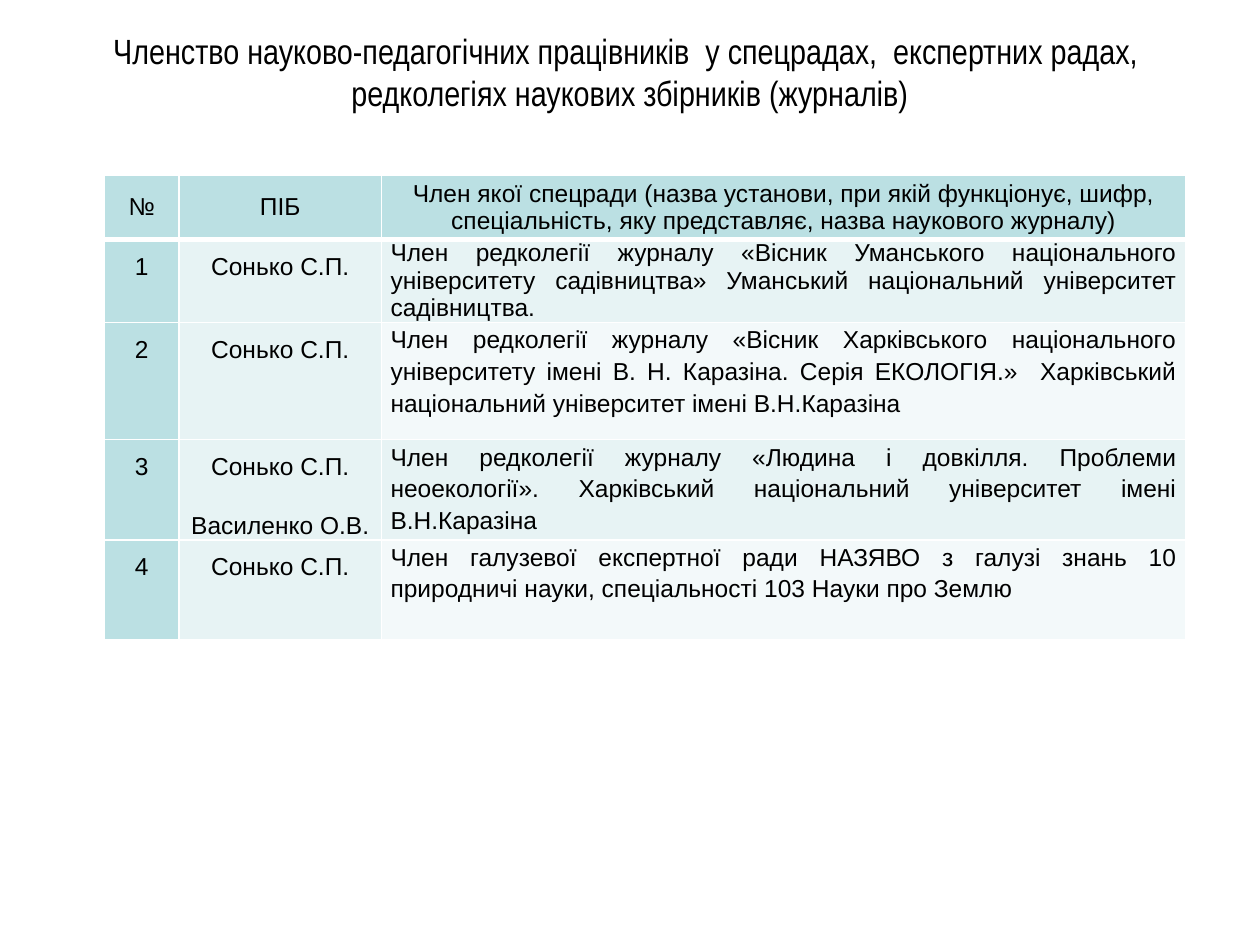
"""Build a slide listing staff membership in academic councils and journals."""
from lxml import etree
from pptx import Presentation
from pptx.dml.color import RGBColor
from pptx.enum.text import MSO_ANCHOR, PP_ALIGN
from pptx.oxml.ns import qn
from pptx.util import Inches, Pt

CENTER, JUSTIFY = PP_ALIGN.CENTER, PP_ALIGN.JUSTIFY
TOP, MIDDLE = MSO_ANCHOR.TOP, MSO_ANCHOR.MIDDLE
BLACK, WHITE, HEADER_FILL = "000000", "FFFFFF", "BBE0E3"
BAND_FILLS = ("E7F3F4", "F3F9FA")
NAME_FILL = BAND_FILLS[0]

TITLE = ("Членство науково-педагогічних працівників  у спецрадах,  експертних радах,  "
         "редколегіях наукових збірників (журналів)")
HEADER = ("№", "ПІБ",
          "Член якої спецради (назва установи, при якій функціонує, шифр, "
          "спеціальність, яку представляє, назва наукового журналу)")
MEMBERS = [
    (["Сонько С.П."],
     "Член редколегії журналу «Вісник Уманського національного університету "
     "садівництва» Уманський національний університет садівництва."),
    (["Сонько С.П."],
     "Член редколегії журналу «Вісник Харківського національного університету "
     "імені В. Н. Каразіна. Серія ЕКОЛОГІЯ.»  Харківський національний "
     "університет імені В.Н.Каразіна"),
    (["Сонько С.П.", "Василенко О.В."],
     "Член редколегії журналу «Людина і довкілля. Проблеми неоекології». "
     "Харківський національний університет імені В.Н.Каразіна"),
    (["Сонько С.П."],
     "Член галузевої експертної ради НАЗЯВО з галузі знань 10 природничі науки, "
     "спеціальності 103 Науки про Землю"),
]
COLUMN_WIDTHS = (0.59, 1.61, 6.38)
ROW_HEIGHTS = (0.51, 0.66, 0.93, 0.79, 0.79)
NAME_FORMAT = {"alignment": CENTER, "line_spacing": 1.5, "space_after": Pt(10)}
DETAIL_FORMAT = {"alignment": JUSTIFY, "line_spacing": 1.15, "space_after": Pt(10)}
COMPACT_FORMAT = {"alignment": JUSTIFY, "line_spacing": 1.0, "space_after": Pt(0)}
HEADER_FORMAT = {**COMPACT_FORMAT, "alignment": CENTER}


def color(value):
    return RGBColor.from_string(value)


def apply(target, values):
    for name, value in values.items():
        setattr(target, name, value)


def write(frame, lines, paragraph_format, font_name, size):
    for index, line in enumerate(lines):
        para = frame.add_paragraph() if index else frame.paragraphs[0]
        apply(para, paragraph_format)
        span = para.add_run()
        span.text = line
        apply(span.font, {"name": font_name, "size": Pt(size), "bold": False})
        span.font.color.rgb = color(BLACK)


def add_borders(cell, widths):
    properties = cell._tc.get_or_add_tcPr()
    for side, width in widths.items():
        line = etree.SubElement(properties, qn(f"a:ln{side}"), w=str(Pt(width)))
        fill = etree.SubElement(line, qn("a:solidFill"))
        etree.SubElement(fill, qn("a:srgbClr"), val=WHITE)


def fill_cell(cell, lines, paragraph_format, fill, anchor, top=1, bottom=1):
    apply(cell, {"margin_left": Inches(0.07), "margin_right": Inches(0.07),
                 "margin_top": 0, "margin_bottom": 0, "vertical_anchor": anchor})
    add_borders(cell, {"L": 1, "R": 1, "T": top, "B": bottom})
    cell.fill.solid()
    cell.fill.fore_color.rgb = color(fill)
    write(cell.text_frame, lines, paragraph_format, "Arial", 14)


def add_title(page):
    title = page.shapes.title
    apply(title, {"left": Inches(0.5), "top": Inches(0.3),
                  "width": Inches(9), "height": Inches(0.54)})
    title.text_frame.vertical_anchor = MIDDLE
    write(title.text_frame, [TITLE], {"alignment": CENTER}, "Arial Narrow", 20)


def add_members(page):
    table = page.shapes.add_table(
        len(ROW_HEIGHTS), len(COLUMN_WIDTHS), Inches(0.83), Inches(1.39),
        Inches(sum(COLUMN_WIDTHS)), Inches(sum(ROW_HEIGHTS))).table
    for column, width in zip(table.columns, COLUMN_WIDTHS):
        column.width = Inches(width)
    for row, height in zip(table.rows, ROW_HEIGHTS):
        row.height = Inches(height)
    for column, text in enumerate(HEADER):
        fill_cell(table.cell(0, column), [text], HEADER_FORMAT, HEADER_FILL, MIDDLE, bottom=3)
    for number, (names, detail) in enumerate(MEMBERS, 1):
        detail_format = COMPACT_FORMAT if number == 1 else DETAIL_FORMAT
        band = BAND_FILLS[(number - 1) % 2]
        cells = [([str(number)], NAME_FORMAT, HEADER_FILL),
                 (names, NAME_FORMAT, NAME_FILL),
                 ([detail], detail_format, band)]
        for column, content in enumerate(cells):
            fill_cell(table.cell(number, column), *content, TOP, top=3 if number == 1 else 1)


def main():
    deck = Presentation()
    apply(deck, {"slide_width": Inches(10), "slide_height": Inches(7.5)})
    page = deck.slides.add_slide(deck.slide_layouts[5])
    add_title(page)
    add_members(page)
    deck.save("out.pptx")


if __name__ == "__main__":
    main()
